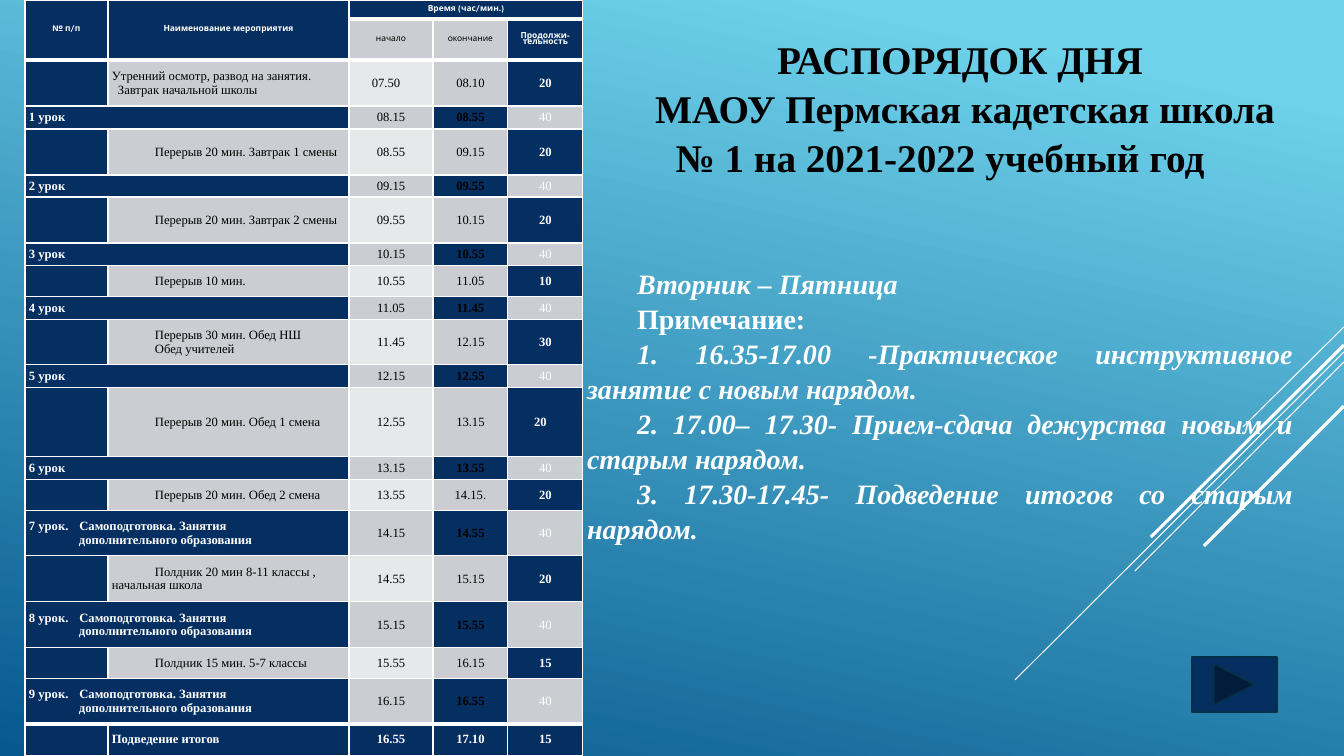
from lxml import etree
from pptx import Presentation
from pptx.dml.color import RGBColor
from pptx.enum.shapes import MSO_CONNECTOR, MSO_SHAPE
from pptx.enum.text import MSO_ANCHOR, MSO_AUTO_SIZE, PP_ALIGN
from pptx.oxml.ns import qn
from pptx.util import Pt

LINE = MSO_CONNECTOR.STRAIGHT
NEXT = MSO_SHAPE.ACTION_BUTTON_FORWARD_OR_NEXT
MID = MSO_ANCHOR.MIDDLE
FIXED = MSO_AUTO_SIZE.NONE
LEFT, CENTER, FULL = PP_ALIGN.LEFT, PP_ALIGN.CENTER, PP_ALIGN.JUSTIFY

NAVY = RGBColor(0x05, 0x2F, 0x61)
EDGE = RGBColor(0x04, 0x31, 0x48)
GRAY = RGBColor(0xCC, 0xCD, 0xD2)
PALE = RGBColor(0xE7, 0xE8, 0xEA)
WHITE = RGBColor(0xFF, 0xFF, 0xFF)
BLACK = RGBColor(0, 0, 0)
SKY = RGBColor(0x6E, 0xD2, 0xEB)
DEEP = RGBColor(0x06, 0x58, 0x8E)
SERIF, SANS = "Times New Roman", "League Spartan"

TITLE = ["РАСПОРЯДОК ДНЯ ", "МАОУ Пермская кадетская школа № 1 на 2021-2022 учебный год"]
NOTES = [
    ("Вторник – Пятница", True),
    ("Примечание:", False),
    ("1. 16.35-17.00 -Практическое инструктивное занятие с новым нарядом.", True),
    ("2. 17.00– 17.30- Прием-сдача дежурства новым и старым нарядом.", True),
    ("3. 17.30-17.45- Подведение итогов со старым нарядом.", True),
]
HEAD = [
    ("№ п/п", "Наименование мероприятия", "Время (час/мин.)", "", ""),
    ("", "", "начало", "окончание", "Продолжи-тельность"),
]
STUDY = "Самоподготовка. Занятия"
EXTRA = "дополнительного образования"
DAY = [
    ("check", ["Утренний осмотр, развод на занятия.", "Завтрак начальной школы"], "07.50", "08.10", "20"),
    ("lesson", ["1 урок"], "08.15", "08.55", "40"),
    ("break", ["Перерыв 20 мин. Завтрак 1 смены"], "08.55", "09.15", "20"),
    ("lesson", ["2 урок"], "09.15", "09.55", "40"),
    ("break", ["Перерыв 20 мин. Завтрак 2 смены"], "09.55", "10.15", "20"),
    ("lesson", ["3 урок"], "10.15", "10.55", "40"),
    ("break", ["Перерыв 10 мин."], "10.55", "11.05", "10"),
    ("lesson", ["4 урок"], "11.05", "11.45", "40"),
    ("break", ["Перерыв 30 мин. Обед НШ", "Обед учителей"], "11.45", "12.15", "30"),
    ("lesson", ["5 урок"], "12.15", "12.55", "40"),
    ("break", ["Перерыв 20 мин. Обед 1 смена"], "12.55", "13.15", "20"),
    ("lesson", ["6 урок"], "13.15", "13.55", "40"),
    ("break", ["Перерыв 20 мин. Обед 2 смена"], "13.55", "14.15.", "20"),
    ("lesson", ["7 урок.\t" + STUDY, EXTRA], "14.15", "14.55", "40"),
    ("break", ["Полдник 20 мин 8-11 классы , начальная школа"], "14.55", "15.15", "20"),
    ("lesson", ["8 урок.\t" + STUDY, EXTRA], "15.15", "15.55", "40"),
    ("break", ["Полдник 15 мин. 5-7 классы"], "15.55", "16.15", "15"),
    ("lesson", ["9 урок.\t" + STUDY, EXTRA], "16.15", "16.55", "40"),
    ("total", ["Подведение итогов"], "16.55", "17.10", "15"),
]
INDENT = {"check": (0, 6), "lesson": (0, 50), "break": (43, 43), "total": (0,)}
FILLS = {
    "check": (NAVY, GRAY, PALE, GRAY, NAVY),
    "lesson": (NAVY, NAVY, GRAY, NAVY, GRAY),
    "break": (NAVY, GRAY, PALE, GRAY, NAVY),
    "total": (NAVY,) * 5,
}
INKS = {
    "check": (WHITE, BLACK, BLACK, BLACK, WHITE),
    "lesson": (WHITE, WHITE, BLACK, BLACK, WHITE),
    "break": (WHITE, BLACK, BLACK, BLACK, WHITE),
    "total": (WHITE,) * 5,
}
BOLDS = {
    "check": (True, False, False, False, True),
    "lesson": (True, True, False, True, False),
    "break": (True, False, False, False, True),
    "total": (True,) * 5,
}
COLS = (83, 241, 84, 75, 75)
TOPS = (0, 19, 60, 106, 129, 175, 197, 243, 266, 297, 320, 365,
        388, 457, 480, 511, 556, 602, 648, 679, 724, 756)
NUDGE = {(2, 2): 10, (12, 4): 10}
RAYS = [
    (327, 1243, 427, 0.75), (352, 1015, 680, 0.75), (362, 1135, 571, 0.75),
    (345, 1151, 537, 2.25), (406, 1204, 546, 2.25),
]
WIDE, HIGH = 1344, 756


def px(num):
    return round(num * 914400 / 100.8)


def add_run(para, text, font, size, ink, bold, slant=False):
    run = para.add_run()
    run.text = text
    run.font.name = font
    run.font.size = Pt(size)
    run.font.color.rgb = ink
    run.font.bold = bold
    run.font.italic = slant


def set_in(para, num):
    props = para._p.get_or_add_pPr()
    props.set("marL", "0")
    props.set("indent", str(px(num)))
    return props


def set_edges(cell, top, base):
    props = cell._tc.get_or_add_tcPr()
    for spot, (side, size) in enumerate((("L", 1), ("R", 1), ("T", top), ("B", base))):
        edge = etree.Element(qn("a:ln" + side), w=str(Pt(size)))
        fill = etree.SubElement(edge, qn("a:solidFill"))
        etree.SubElement(fill, qn("a:srgbClr"), val=str(WHITE))
        props.insert(spot, edge)


def fill_cell(cell, lines, fill, ink, bold, font, size, align, shifts, nudge, top, base):
    cell.vertical_anchor = MID
    cell.margin_left = px(4)
    cell.margin_right = px(4 + nudge)
    cell.margin_top = cell.margin_bottom = 0
    cell.fill.solid()
    cell.fill.fore_color.rgb = fill
    set_edges(cell, top, base)
    frame = cell.text_frame
    for num, text in enumerate(lines):
        para = frame.add_paragraph() if num else frame.paragraphs[0]
        para.alignment = align
        props = set_in(para, shifts[num])
        if "\t" in text:
            tabs = etree.SubElement(props, qn("a:tabLst"))
            etree.SubElement(tabs, qn("a:tab"), pos=str(px(49)), algn="l")
        if font == SANS:
            para.line_spacing = 0.75
        add_run(para, text, font, size, ink, bold)


def add_plan(slide):
    rows = len(HEAD) + len(DAY)
    plan = slide.shapes.add_table(rows, len(COLS), px(25), 0, px(sum(COLS)), px(HIGH)).table
    plan.first_row = plan.horz_banding = False
    for col, wide in zip(plan.columns, COLS):
        col.width = px(wide)
    for num, row in enumerate(plan.rows):
        row.height = px(TOPS[num + 1] - TOPS[num])
    for col in (0, 1):
        plan.cell(0, col).merge(plan.cell(1, col))
    plan.cell(0, 2).merge(plan.cell(0, 4))
    for num, texts in enumerate(HEAD):
        for col, text in enumerate(texts):
            light = num == 1 and col in (2, 3)
            fill, ink = (GRAY, BLACK) if light else (NAVY, WHITE)
            top, base = (3, 1) if num and col > 1 else (1, 3)
            fill_cell(plan.cell(num, col), [text], fill, ink, not light,
                      SANS, 6, CENTER, (0,), 0, top, base)
    for num, (kind, lines, *times) in enumerate(DAY, len(HEAD)):
        pair = [lines, [""]] if kind == "lesson" else [[""], lines]
        if kind == "lesson":
            plan.cell(num, 0).merge(plan.cell(num, 1))
        top = 3 if num in (2, rows - 1) else 1
        base = 3 if num == rows - 2 else 1
        for col, part in enumerate(pair + [[time] for time in times]):
            align, shifts = (LEFT, INDENT[kind]) if col < 2 else (CENTER, (0,))
            fill_cell(plan.cell(num, col), part, FILLS[kind][col], INKS[kind][col],
                      BOLDS[kind][col], SERIF, 9, align, shifts,
                      NUDGE.get((num, col), 0), top, base)


def fill_box(box, top, high, items, size, ink, align):
    box.left, box.top, box.width, box.height = px(577), px(top), px(726), px(high)
    frame = box.text_frame
    frame.word_wrap = True
    frame.auto_size = FIXED
    frame.vertical_anchor = MID
    for num, (text, slant) in enumerate(items):
        para = frame.add_paragraph() if num else frame.paragraphs[0]
        para.alignment = align
        para.line_spacing = 1.04
        para.space_before = Pt(0)
        etree.SubElement(set_in(para, 50), qn("a:buNone"))
        add_run(para, text, SERIF, size, ink, True, slant)


def main():
    deck = Presentation()
    deck.slide_width, deck.slide_height = px(WIDE), px(HIGH)
    slide = deck.slides.add_slide(deck.slide_layouts[1])
    back = slide.background.fill
    back.gradient()
    back.gradient_angle = 258
    for stop, ink, spot in zip(back.gradient_stops, (SKY, DEEP), (0.1, 1)):
        stop.color.rgb = ink
        stop.position = spot
    for top, left, base, size in RAYS:
        ray = slide.shapes.add_connector(LINE, px(WIDE), px(top), px(left), px(base))
        ray.line.color.rgb = WHITE
        ray.line.width = Pt(size)
        etree.SubElement(ray._element.spPr, qn("a:effectLst"))
    add_plan(slide)
    title, body = slide.placeholders
    fill_box(title, 26, 161, [(text, False) for text in TITLE], 28, BLACK, CENTER)
    fill_box(body, 262, 286, NOTES, 20, WHITE, FULL)
    button = slide.shapes.add_shape(NEXT, px(1192), px(657), px(85), px(55))
    button.shadow.inherit = False
    button.fill.solid()
    button.fill.fore_color.rgb = NAVY
    button.line.color.rgb = EDGE
    button.line.width = Pt(1.25)
    deck.save("out.pptx")


if __name__ == "__main__":
    main()
